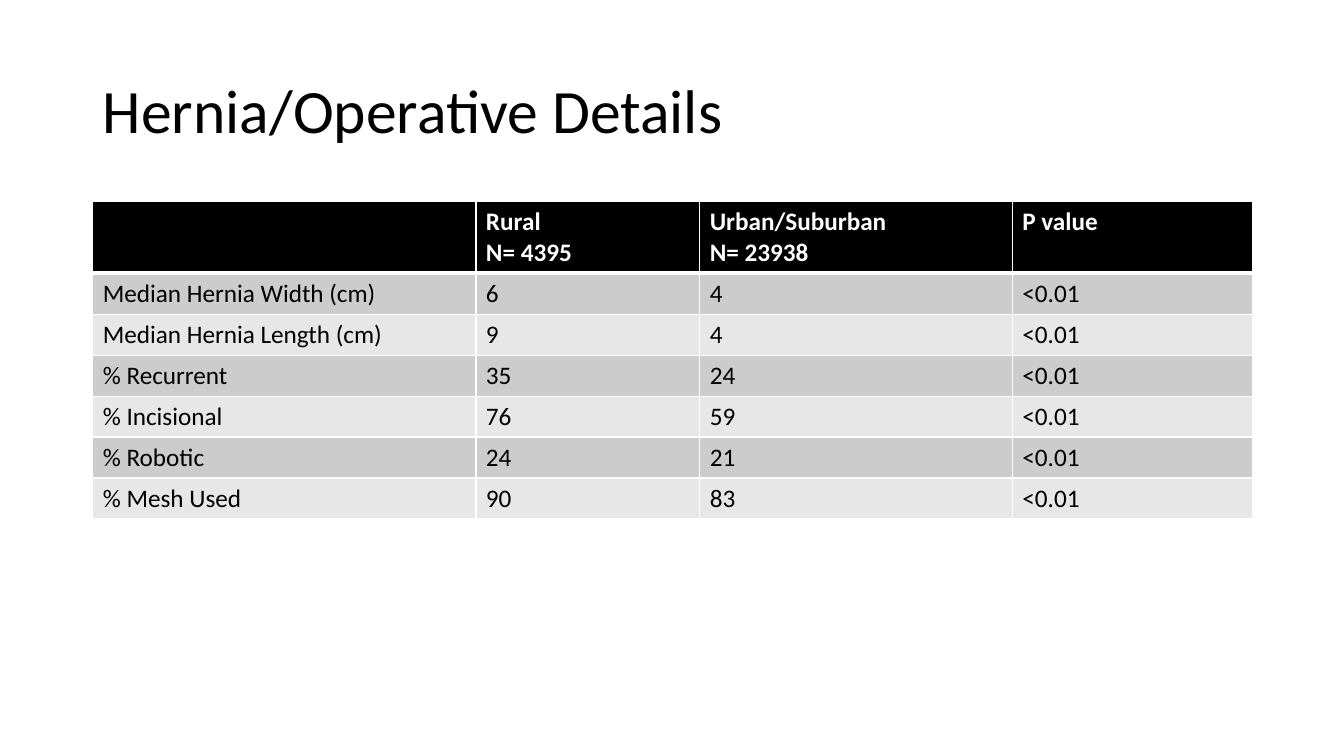
from pptx import Presentation
from pptx.dml.color import RGBColor
from pptx.enum.text import MSO_ANCHOR, PP_ALIGN
from pptx.oxml import parse_xml
from pptx.oxml.ns import nsdecls
from pptx.util import Inches, Pt

FONT = "Calibri"
COLORS = {"black": "000000", "white": "FFFFFF", "odd": "CCCCCC", "even": "E7E7E7"}
COLUMN_WIDTHS = [3.8, 2.22, 3.1, 2.38]
HEADER_HEIGHT = 0.69
ROWS = [
    ["", "Rural\nN= 4395", "Urban/Suburban\nN= 23938", "P value"],
    ["Median Hernia Width (cm)", "6", "4", "<0.01"],
    ["Median Hernia Length (cm)", "9", "4", "<0.01"],
    ["% Recurrent", "35", "24", "<0.01"],
    ["% Incisional", "76", "59", "<0.01"],
    ["% Robotic", "24", "21", "<0.01"],
    ["% Mesh Used", "90", "83", "<0.01"],
]


def rgb(name):
    return RGBColor.from_string(COLORS[name])


def add_run(p, text, size, color, bold=False):
    r = p.add_run()
    r.text = text
    r.font.name = FONT
    r.font.size = Pt(size)
    r.font.bold = bold
    r.font.color.rgb = rgb(color)


def add_title(s, x, y, w, h):
    title = s.shapes.title
    title.left, title.top = Inches(x), Inches(y)
    title.width, title.height = Inches(w), Inches(h)
    tf = title.text_frame
    tf.word_wrap = True
    tf.vertical_anchor = MSO_ANCHOR.MIDDLE
    p = tf.paragraphs[0]
    p.alignment = PP_ALIGN.LEFT
    p.line_spacing = 0.9
    add_run(p, "Hernia/Operative Details", 44, "black")


def set_borders(cell, widths):
    tcPr = cell._tc.get_or_add_tcPr()
    for side, width in widths.items():
        tcPr.append(parse_xml(
            f'<a:ln{side} {nsdecls("a")} w="{Pt(width)}"><a:solidFill>'
            f'<a:srgbClr val="{COLORS["white"]}"/></a:solidFill></a:ln{side}>'))


def fill_cell(cell, text, row):
    header = row == 0
    set_borders(cell, {"L": 1, "R": 1, "T": 3 if row == 1 else 1, "B": 3 if header else 1})
    cell.fill.solid()
    cell.fill.fore_color.rgb = rgb("black" if header else "odd" if row % 2 else "even")
    tf = cell.text_frame
    for i, line in enumerate(text.splitlines()):
        p = tf.add_paragraph() if i else tf.paragraphs[0]
        add_run(p, line, 18, "white" if header else "black", header)


def add_details_table(s, x, y, w, h):
    frame = s.shapes.add_table(len(ROWS), len(COLUMN_WIDTHS),
                               Inches(x), Inches(y), Inches(w), Inches(h))
    table = frame.table
    for column, width in zip(table.columns, COLUMN_WIDTHS):
        column.width = Inches(width)
    body_height = (h - HEADER_HEIGHT) / (len(ROWS) - 1)
    for i, values in enumerate(ROWS):
        table.rows[i].height = Inches(body_height if i else HEADER_HEIGHT)
        for j, text in enumerate(values):
            fill_cell(table.cell(i, j), text, i)


def main():
    prs = Presentation()
    prs.slide_width, prs.slide_height = Inches(13.33), Inches(7.5)
    s = prs.slides.add_slide(prs.slide_layouts[5])
    s.background.fill.solid()
    s.background.fill.fore_color.rgb = rgb("white")
    add_title(s, 0.92, 0.4, 11.5, 1.45)
    add_details_table(s, 0.92, 2, 11.5, 3.13)
    prs.save("out.pptx")


if __name__ == "__main__":
    main()
